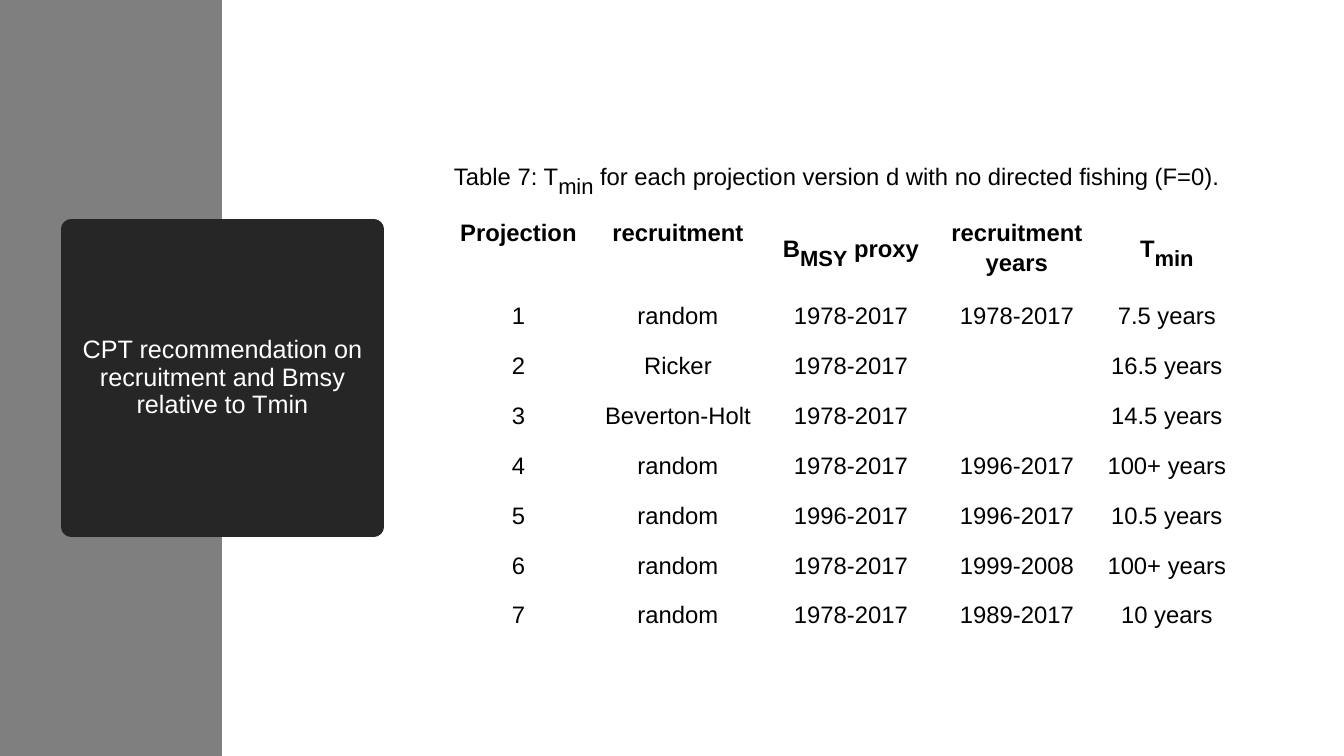
"""Build the slide on recruitment and Bmsy relative to Tmin."""
from dataclasses import dataclass

import pptx
import pptx.dml.color
import pptx.enum.shapes
import pptx.enum.text
import pptx.oxml
import pptx.oxml.ns
import pptx.util

COLORS = {"band": "7F7F7F", "panel": "262626", "light": "FFFFFF", "ink": "000000"}
FONT = "Arial"
TEXT_SIZE = 17
SUBSCRIPT_SIZE = 27
CELL_MARGIN = 8
COLUMN_WIDTHS = [145, 174, 172, 160, 140]
CAPTION_HEIGHT, HEADING_HEIGHT, ROW_HEIGHT = 52, 83, 50
CAPTION = "Table 7: T|min| for each projection version d with no directed fishing (F=0)."
HEADINGS = ["Projection", "recruitment", "B|MSY| proxy", "recruitment years", "T|min"]


@dataclass
class Block:
    left: int
    top: int
    width: int
    height: int
    color: str


@dataclass
class Projection:
    recruitment: str
    proxy: str
    years: str
    t_min: str


BAND = Block(0, 0, 222, 756, "band")
PANEL = Block(71, 229, 303, 298, "panel")
PROJECTIONS = [
    Projection("random", "1978-2017", "1978-2017", "7.5 years"),
    Projection("Ricker", "1978-2017", "", "16.5 years"),
    Projection("Beverton-Holt", "1978-2017", "", "14.5 years"),
    Projection("random", "1978-2017", "1996-2017", "100+ years"),
    Projection("random", "1996-2017", "1996-2017", "10.5 years"),
    Projection("random", "1978-2017", "1999-2008", "100+ years"),
    Projection("random", "1978-2017", "1989-2017", "10 years"),
]


def px(length: int) -> int:
    return round(length * 914400 / 100.8)


def rgb(name: str) -> pptx.dml.color.RGBColor:
    return pptx.dml.color.RGBColor.from_string(COLORS[name])


def style_font(font, size: int, color: str, bold: bool = False) -> None:
    font.name = FONT
    font.size = pptx.util.Pt(size)
    font.bold = bold
    font.color.rgb = rgb(color)


def add_block(slide, block: Block):
    shape = slide.shapes.add_shape(
        pptx.enum.shapes.MSO_SHAPE.RECTANGLE,
        px(block.left), px(block.top), px(block.width), px(block.height))
    shape.shadow.inherit = False
    shape.fill.solid()
    shape.fill.fore_color.rgb = rgb(block.color)
    shape.line.fill.background()
    return shape


def add_title(slide, block: Block, title: str) -> None:
    panel = add_block(slide, block)
    panel.line.color.rgb = rgb(block.color)
    panel.line.width = pptx.util.Pt(13.75)
    outline = panel.element.spPr.find(pptx.oxml.ns.qn("a:ln"))
    outline.append(pptx.oxml.parse_xml(f"<a:round {pptx.oxml.ns.nsdecls('a')}/>"))
    frame = panel.text_frame
    frame.word_wrap = True
    frame.vertical_anchor = pptx.enum.text.MSO_ANCHOR.MIDDLE
    frame.text = title
    paragraph = frame.paragraphs[0]
    paragraph.alignment = pptx.enum.text.PP_ALIGN.CENTER
    paragraph.line_spacing = 0.9
    style_font(paragraph.runs[0].font, 18, "light")


def fill_cell(cell, text: str, bold: bool = False, centred: bool = True) -> None:
    """Write text in which every second part between bars is a subscript."""
    cell.fill.background()
    cell.margin_left = cell.margin_right = px(CELL_MARGIN)
    cell.margin_top = cell.margin_bottom = px(CELL_MARGIN)
    paragraph = cell.text_frame.paragraphs[0]
    align = pptx.enum.text.PP_ALIGN
    paragraph.alignment = align.CENTER if centred else align.LEFT
    paragraph.line_spacing = 1.15
    if not text:
        return
    for index, part in enumerate(text.split("|")):
        lowered = index % 2 == 1
        run = paragraph.add_run()
        run.text = part
        style_font(run.font, SUBSCRIPT_SIZE if lowered else TEXT_SIZE, "ink", bold)
        if lowered:
            run._r.get_or_add_rPr().set("baseline", "-25000")


def add_projection_table(slide, left: int, top: int) -> None:
    heights = [CAPTION_HEIGHT, HEADING_HEIGHT] + [ROW_HEIGHT] * len(PROJECTIONS)
    table = slide.shapes.add_table(
        len(heights), len(COLUMN_WIDTHS), px(left), px(top),
        px(sum(COLUMN_WIDTHS)), px(sum(heights))).table
    table.first_row = False
    table.horz_banding = False
    for column, width in zip(table.columns, COLUMN_WIDTHS):
        column.width = px(width)
    for row, height in zip(table.rows, heights):
        row.height = px(height)
    caption = table.cell(0, 0)
    caption.merge(table.cell(0, len(COLUMN_WIDTHS) - 1))
    fill_cell(caption, CAPTION, centred=False)
    for column, heading in enumerate(HEADINGS):
        fill_cell(table.cell(1, column), heading, bold=True)
    for number, item in enumerate(PROJECTIONS, start=1):
        values = [str(number), item.recruitment, item.proxy, item.years, item.t_min]
        for column, value in enumerate(values):
            fill_cell(table.cell(number + 1, column), value)


def main() -> None:
    deck = pptx.Presentation()
    deck.slide_width, deck.slide_height = px(1344), px(756)
    slide = deck.slides.add_slide(deck.slide_layouts[6])
    add_block(slide, BAND)
    add_title(slide, PANEL, "CPT recommendation on recruitment and Bmsy relative to Tmin")
    add_projection_table(slide, 446, 136)
    deck.save("out.pptx")


if __name__ == "__main__":
    main()
